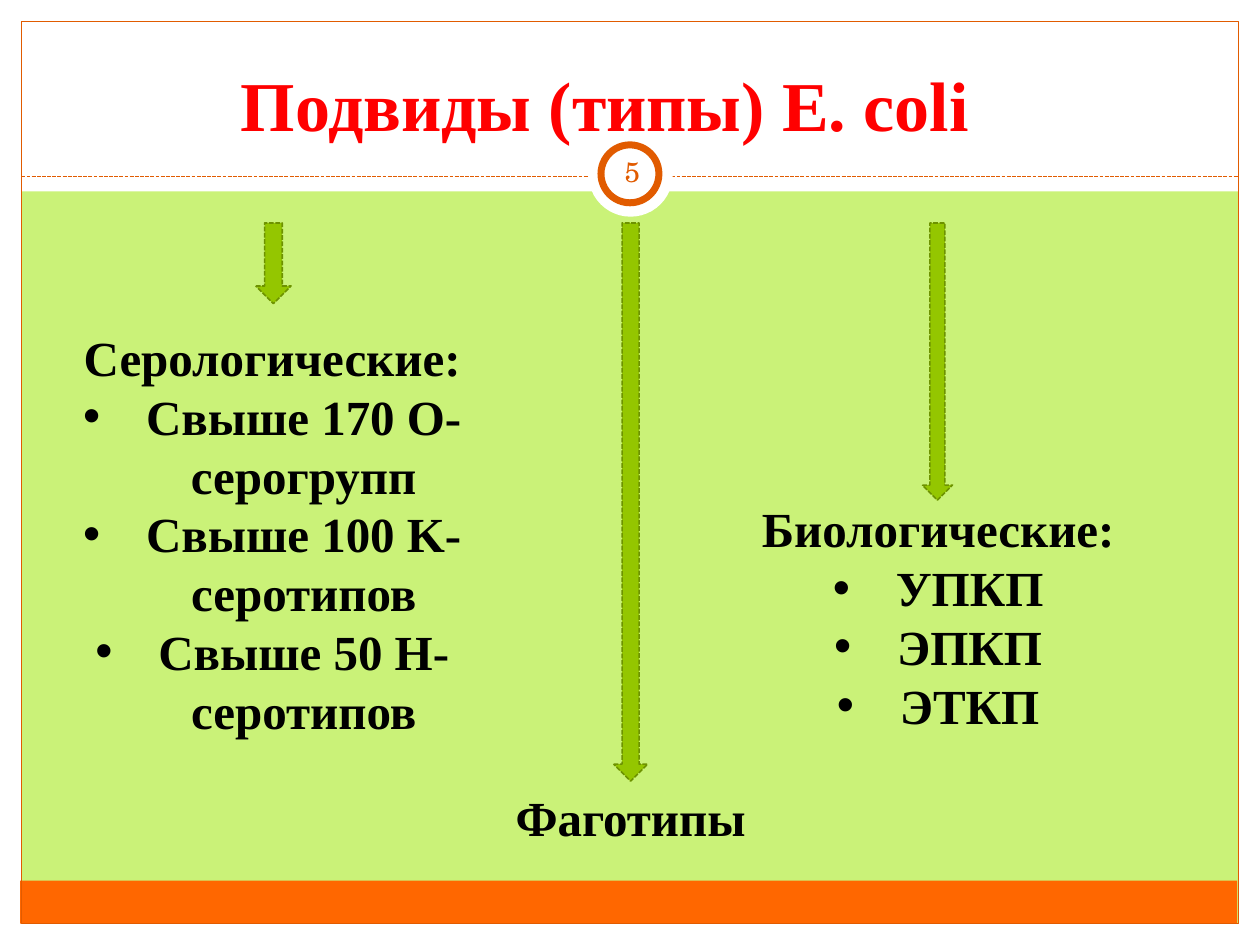
from lxml import etree
from pptx import Presentation
from pptx import util as u
from pptx.dml.color import RGBColor
from pptx.enum import dml, shapes, text
from pptx.oxml.ns import qn

WHITE, ORANGE, BAND = "FFFFFF", "E15B00", "FF6700"
LIME, GREEN, DARK_GREEN = "CAF278", "94C600", "6D9200"
SERIF, NUMBER_FONT = "Times New Roman", "TeX Gyre Schola"
WIDTH, HEIGHT, EDGE = 10, 7.5, 0.17
RULE_Y = 1.4

MARGINS = [
    (0, HEIGHT - EDGE, WIDTH, EDGE),
    (0, 0, WIDTH, 1.52),
    (0, 0, EDGE, HEIGHT),
    (WIDTH - EDGE, 0, EDGE, HEIGHT),
]
TITLE = ((1.14, 0.44, 7.32, 0.77), "Подвиды (типы) E. coli")
GROUPS = [
    ((5.87, 3.91, 3.15, 1.99), "Биологические:", ["УПКП", "ЭПКП", "ЭТКП"]),
    ((0.35, 2.55, 3.62, 3.4), "Серологические:",
     ["Свыше 170 O-серогрупп", "Свыше 100 K-серотипов", "Свыше 50 H-серотипов"]),
    ((3.43, 6.2, 3.15, 0.57), "Фаготипы", []),
]
ARROW_TOP = 1.77
ARROWS = [(4.87, 0.27, 4.43), (2.03, 0.28, 0.64), (7.32, 0.24, 2.2)]
PAGE_NUMBER = ((4.77, 1.12, 0.5, 0.48), "5")


def color(value):
    return RGBColor.from_string(value)


def set_line(line, value, width, dashed=False):
    line.color.rgb = color(value)
    line.width = u.Pt(width)
    if dashed:
        line.dash_style = dml.MSO_LINE.SQUARE_DOT


def add_shape(page, kind, place, fill=None):
    shape = page.shapes.add_shape(kind, *map(u.Inches, place))
    shape.shadow.inherit = False
    if fill:
        shape.fill.solid()
        shape.fill.fore_color.rgb = color(fill)
    else:
        shape.fill.background()
    shape.line.fill.background()
    return shape


def add_text(page, place, lines, size, value, font=SERIF, bold=True):
    frame = page.shapes.add_textbox(*map(u.Inches, place)).text_frame
    frame.word_wrap = True
    for index, line in enumerate(lines):
        para = frame.paragraphs[0] if index == 0 else frame.add_paragraph()
        para.text = line
        para.alignment = text.PP_ALIGN.CENTER
        para.font.name = font
        para.font.size = u.Pt(size)
        para.font.bold = bold
        para.font.color.rgb = color(value)
        if index:
            add_bullet(para)
    return frame


def add_bullet(para):
    props = para._p.get_or_add_pPr()
    props.set("marL", str(u.Inches(0.5)))
    props.set("indent", str(u.Inches(-0.5)))
    bullet_font = etree.Element(qn("a:buFont"), typeface="Arial")
    bullet = etree.Element(qn("a:buChar"), char="•")
    props.insert(0, bullet_font)
    props.insert(1, bullet)


def add_frame(page):
    kinds = shapes.MSO_SHAPE
    for place in MARGINS:
        add_shape(page, kinds.RECTANGLE, place, WHITE)
    inner = WIDTH - 2 * EDGE
    add_shape(page, kinds.RECTANGLE, (0.16, 6.99, inner, 0.34), BAND)
    border = add_shape(page, kinds.RECTANGLE, (EDGE, EDGE, inner, HEIGHT - 2 * EDGE))
    set_line(border.line, ORANGE, 0.75)
    ends = (EDGE, RULE_Y, WIDTH - EDGE, RULE_Y)
    rule = page.shapes.add_connector(shapes.MSO_CONNECTOR.STRAIGHT, *map(u.Inches, ends))
    set_line(rule.line, ORANGE, 0.75, dashed=True)
    etree.SubElement(rule._element.spPr, qn("a:effectLst"))
    add_shape(page, kinds.OVAL, (4.67, 1.05, 0.67, 0.67), WHITE)
    ring = add_shape(page, kinds.OVAL, (4.77, 1.15, 0.46, 0.46), WHITE)
    set_line(ring.line, ORANGE, 4)


def main():
    deck = Presentation()
    deck.slide_width, deck.slide_height = u.Inches(WIDTH), u.Inches(HEIGHT)
    page = deck.slides.add_slide(deck.slide_layouts[6])
    page.background.fill.solid()
    page.background.fill.fore_color.rgb = color(LIME)

    add_frame(page)
    place, title = TITLE
    add_text(page, place, [title], 40, "FF0000")
    for place, heading, items in GROUPS:
        add_text(page, place, [heading, *items], 28, "000000")
    for left, width, height in ARROWS:
        arrow = add_shape(page, shapes.MSO_SHAPE.DOWN_ARROW,
                          (left, ARROW_TOP, width, height), GREEN)
        set_line(arrow.line, DARK_GREEN, 0.9, dashed=True)

    place, number = PAGE_NUMBER
    frame = add_text(page, place, [number], 16, ORANGE, NUMBER_FONT, bold=False)
    frame.vertical_anchor = text.MSO_ANCHOR.MIDDLE
    frame.margin_left = frame.margin_right = u.Inches(0.05)
    frame.margin_top = frame.margin_bottom = u.Inches(0.05)
    deck.save("out.pptx")


if __name__ == "__main__":
    main()
